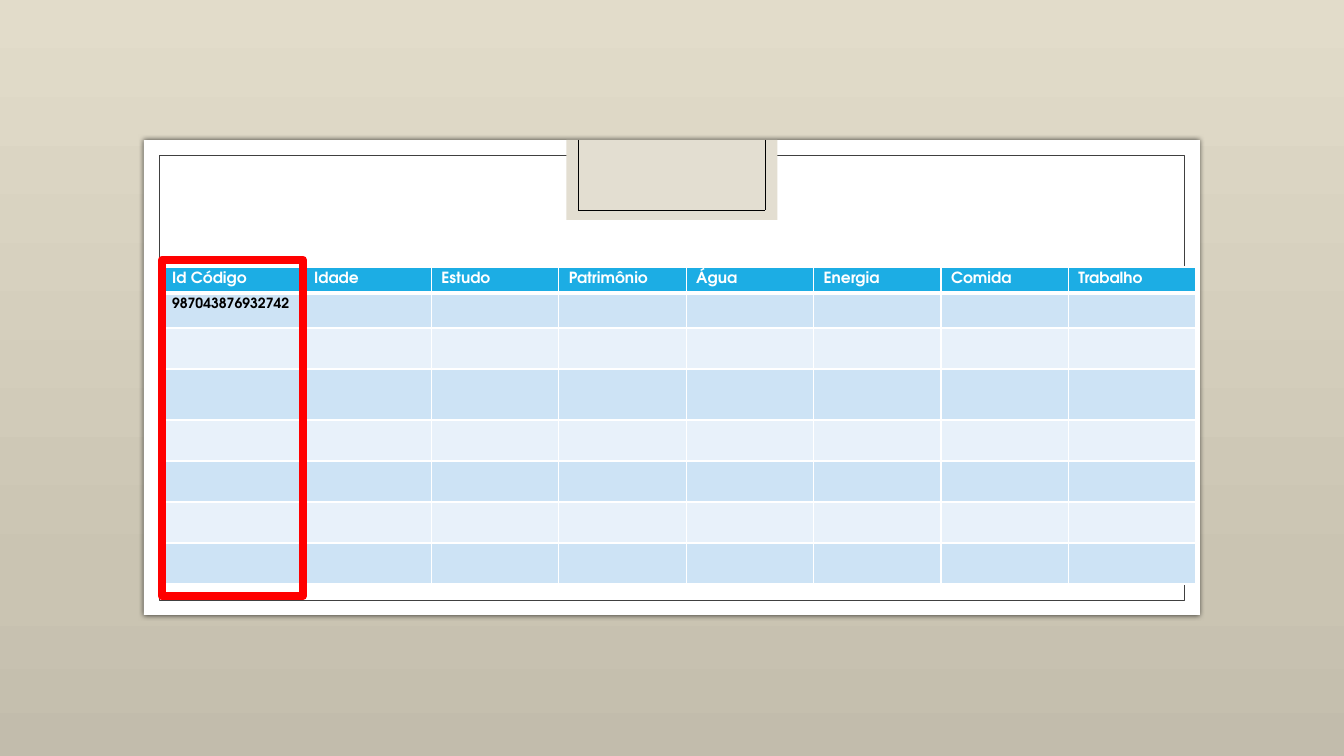
from copy import deepcopy

from lxml import etree
from pptx import Presentation
from pptx import util as u
from pptx.dml.color import RGBColor
from pptx.enum import shapes
from pptx.oxml import ns, parse_xml

PX = 914400 / 100.8
FONT = "TeX Gyre Adventor"
WHITE = RGBColor(0xFF, 0xFF, 0xFF)
BLACK = RGBColor(0x00, 0x00, 0x00)
FRAME_GREY = RGBColor(0x40, 0x40, 0x40)
TAB_BEIGE = RGBColor(0xE3, 0xDE, 0xD1)
HEADER_BLUE = RGBColor(0x1C, 0xAD, 0xE4)
BANDS = (RGBColor(0xE8, 0xF1, 0xFA), RGBColor(0xCD, 0xE3, 0xF5))
RED = RGBColor(0xFF, 0x00, 0x00)
BACKDROP = ((0, RGBColor(0xE2, 0xDC, 0xCA)),
            (0.77, RGBColor(0xCA, 0xC4, 0xB2)),
            (1, RGBColor(0xC2, 0xBC, 0xAC)))

HEADERS = ("Id Código", "Idade", "Estudo", "Patrimônio",
           "Água", "Energia", "Comida", "Trabalho")
CODE = "987043876932742"
ROW_HEIGHTS = (26, 35, 41, 51, 41, 41, 41, 41)
ID_WIDTH = 142


def emu(px):
    return u.Emu(round(px * PX))


def add_rect(s, box, fill=None, line=None, weight=0.5):
    sp = s.shapes.add_shape(shapes.MSO_SHAPE.RECTANGLE, *map(emu, box))
    sp.shadow.inherit = False
    if fill is None:
        sp.fill.background()
    else:
        sp.fill.solid()
        sp.fill.fore_color.rgb = fill
    if line is None:
        sp.line.fill.background()
    else:
        sp.line.color.rgb = line
        sp.line.width = u.Pt(weight)
    return sp


def add_line(s, *ends):
    line = s.shapes.add_connector(shapes.MSO_CONNECTOR.STRAIGHT, *map(emu, ends))
    line.line.color.rgb = BLACK
    line.line.width = u.Pt(0.5)
    etree.SubElement(line._element.spPr, ns.qn("a:effectLst"))


def paint_background(s):
    fill = s.background.fill
    fill.gradient()
    fill.gradient_angle = 270
    stops = s._element.find(".//" + ns.qn("a:gsLst"))
    stops.append(deepcopy(stops[-1]))
    for stop, (position, color) in zip(fill.gradient_stops, BACKDROP):
        stop.position = position
        stop.color.rgb = color


def add_card(s, box):
    x, y, w, h = box
    card = add_rect(s, box, fill=WHITE)
    # Soft shadow all around
    effects = card._element.spPr.find(ns.qn("a:effectLst"))
    effects.append(parse_xml(
        f'<a:outerShdw {ns.nsdecls("a")} blurRad="{u.Pt(4)}" dist="0" rotWithShape="0">'
        '<a:srgbClr val="000000"><a:alpha val="66000"/></a:srgbClr></a:outerShdw>'))
    # Inner frame
    add_rect(s, (x + 15, y + 15, w - 31, h - 30), line=FRAME_GREY)
    # Tab hanging from the top edge
    tab_w, tab_h, inset = 211, 80, 12
    left = x + (w - tab_w) / 2
    add_rect(s, (left, y, tab_w, tab_h), fill=TAB_BEIGE)
    x1, x2, bottom = left + inset, left + tab_w - inset, y + tab_h - 10
    for ends in ((x1, y, x1, bottom), (x2, y, x2, bottom), (x1, bottom, x2, bottom)):
        add_line(s, *ends)


def set_border(cell, side, weight):
    tc_pr = cell._tc.get_or_add_tcPr()
    tc_pr.append(parse_xml(
        f'<a:{side} {ns.nsdecls("a")} w="{u.Pt(weight)}"><a:solidFill>'
        f'<a:srgbClr val="{WHITE}"/></a:solidFill></a:{side}>'))


def format_cell(cell, row, value):
    for side in ("lnL", "lnR", "lnT", "lnB"):
        heavy = (row, side) in ((0, "lnB"), (1, "lnT"))
        set_border(cell, side, 3 if heavy else 1)
    cell.fill.solid()
    cell.fill.fore_color.rgb = BANDS[row % 2] if row else HEADER_BLUE
    cell.margin_top = emu(5 if value else 0)
    cell.margin_bottom = 0
    if value:
        r = cell.text_frame.paragraphs[0].add_run()
        r.text = value
        style = {"name": FONT, "bold": True, "size": u.Pt(10 if row else 11)}
        for name, setting in style.items():
            setattr(r.font, name, setting)
        r.font.color.rgb = BLACK if row else WHITE


def add_survey_table(s, box):
    x, y, w, h = box
    table = s.shapes.add_table(len(ROW_HEIGHTS), len(HEADERS), *map(emu, box)).table
    other_width = (w - ID_WIDTH) / (len(HEADERS) - 1)
    for i, column in enumerate(table.columns):
        column.width = emu(other_width if i else ID_WIDTH)
    for row, height in zip(table.rows, ROW_HEIGHTS):
        row.height = emu(height)
    values = {(0, i): header for i, header in enumerate(HEADERS)}
    values[1, 0] = CODE
    for i in range(len(ROW_HEIGHTS)):
        for j in range(len(HEADERS)):
            format_cell(table.cell(i, j), i, values.get((i, j)))
    # Highlight around the id column
    add_rect(s, (x, y - 7, ID_WIDTH - 1, h + 19), line=RED, weight=6)


def main():
    prs = Presentation()
    prs.slide_width, prs.slide_height = emu(1344), emu(756)
    s = prs.slides.add_slide(prs.slide_layouts[6])
    paint_background(s)
    add_card(s, (144, 140, 1056, 475))
    add_survey_table(s, (162, 267, 1034, sum(ROW_HEIGHTS)))
    prs.save("out.pptx")


if __name__ == "__main__":
    main()
